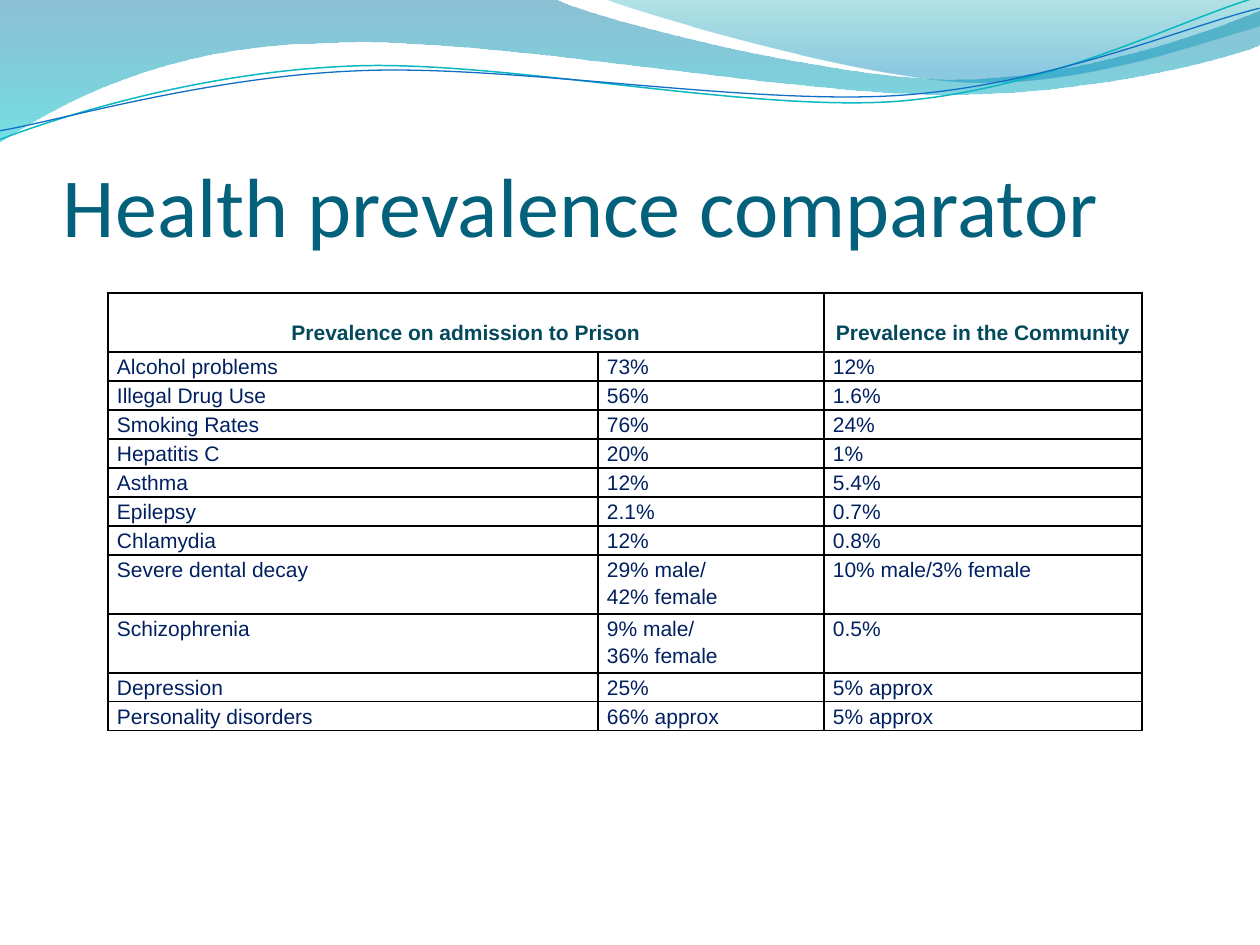
"""Build the health prevalence comparator slide."""
import lxml.etree
import pptx
import pptx.dml.color
import pptx.enum.text
import pptx.oxml.ns
import pptx.util

RGB = pptx.dml.color.RGBColor
ALIGN = pptx.enum.text.PP_ALIGN
ANCHOR = pptx.enum.text.MSO_ANCHOR
qn = pptx.oxml.ns.qn
Pt = pptx.util.Pt

TITLE = RGB(0x04, 0x61, 0x7B)
HEADER = RGB(0x03, 0x49, 0x5C)
BODY = RGB(0x00, 0x20, 0x60)
DEEP_TEAL = RGB(0x00, 0x74, 0xA1)
AQUA = RGB(0x00, 0xC6, 0xCF)
GREEN_TEAL = RGB(0x00, 0xA1, 0xA9)
SKY = RGB(0x00, 0x8B, 0xBF)
TEAL_LINE = RGB(0x0A, 0xB8, 0xBF)
BLUE_LINE = RGB(0x0F, 0x6F, 0xC6)


def px(n):
    return round(n * 914400 / 126)


def add_curve(shapes, start, segments, close):
    points = [pt for seg in segments for pt in zip(seg[::2], seg[1::2])]
    builder = shapes.build_freeform(px(start[0]), px(start[1]))
    builder.add_line_segments([(px(x), px(y)) for x, y in points], close=close)
    s = builder.convert_to_shape()
    s.shadow.inherit = False
    steps = iter(list(s._element.iter(qn("a:lnTo"))))
    for seg in segments:
        step = next(steps)
        if len(seg) == 6:
            step.addprevious(curve := lxml.etree.Element(qn("a:cubicBezTo")))
            for part in (step, next(steps), next(steps)):
                curve.append(part[0])
                part.getparent().remove(part)
    return s


prs = pptx.Presentation()
prs.slide_width, prs.slide_height = px(1260), px(945)
slide = prs.slides.add_slide(prs.slide_layouts[6])

waves = [
    ((0, 0),
     [(554, -1), (600, 21, 837, 79, 955, 79), (1075, 79, 1207, 33, 1260, 11),
      (1261, 45), (1238, 55, 1096, 96, 940, 94), (783, 94, 481, 35, 324, 43),
      (163, 45, 58, 105, -1, 142)],
     [(0, DEEP_TEAL, 45), (1, AQUA, 55)]),
    ((604, -1),
     [(641, 14, 859, 78, 969, 82), (1079, 87, 1211, 40, 1260, 26), (1260, 0)],
     [(0, GREEN_TEAL, 30), (0.8, SKY, 45)]),
]
for start, segments, stops in waves:
    s = add_curve(slide.shapes, start, segments, True)
    s.line.fill.background()
    s.fill.gradient()
    s.fill.gradient_angle = 270
    for stop, (position, color, _) in zip(s.fill.gradient_stops, stops):
        stop.position = position
        stop.color.rgb = color
    colors = s._element.spPr.iter(qn("a:srgbClr"))
    for clr, (_, _, alpha) in zip(colors, stops):
        lxml.etree.SubElement(clr, qn("a:alpha"), val=str(alpha * 1000))

lines = [
    ((-3, 110),
     [(58, 90, 199, 52, 350, 53), (499, 53, 745, 118, 896, 114),
      (1049, 109, 1184, 45, 1260, 27)], TEAL_LINE, 0.85),
    ((-2, 101),
     [(57, 94, 207, 57, 357, 58), (509, 58, 750, 112, 902, 108),
      (1052, 104, 1189, 52, 1262, 38)], BLUE_LINE, 0.75),
]
for start, segments, color, width in lines:
    s = add_curve(slide.shapes, start, segments, False)
    s.rotation = 357.3
    s.fill.background()
    s.line.color.rgb = color
    s.line.width = Pt(width)

rows = [
    ("Prevalence on admission to Prison", "", "Prevalence in the Community"),
    ("Alcohol problems", "73%", "12%"),
    ("Illegal Drug Use", "56%", "1.6%"),
    ("Smoking Rates", "76%", "24%"),
    ("Hepatitis C", "20%", "1%"),
    ("Asthma", "12%", "5.4%"),
    ("Epilepsy", "2.1%", "0.7%"),
    ("Chlamydia", "12%", "0.8%"),
    ("Severe dental decay", "29% male/\n42% female", "10% male/3% female"),
    ("Schizophrenia", "9% male/\n36% female", "0.5%"),
    ("Depression", "25%", "5% approx"),
    ("Personality disorders", "66% approx", "5% approx"),
]
widths = [490, 226, 318]
heights = [59 if i == 0 or "\n" in row[1] else 29 for i, row in enumerate(rows)]
table = slide.shapes.add_table(len(rows), len(widths), px(108), px(293),
                               px(sum(widths)), px(sum(heights))).table
table.first_row = table.horz_banding = False
for col, width in zip(table.columns, widths):
    col.width = px(width)
for row, height in zip(table.rows, heights):
    row.height = px(height)
table.cell(0, 0).merge(table.cell(0, 1))

for i, row in enumerate(rows):
    for j, text in enumerate(row):
        cell = table.cell(i, j)
        cell.margin_left = cell.margin_right = px(9)
        cell.margin_top = 0
        cell.margin_bottom = px(0 if i else 7)
        cell.vertical_anchor = ANCHOR.TOP if i else ANCHOR.BOTTOM
        tcPr = cell._tc.get_or_add_tcPr()
        for side in ("a:lnL", "a:lnR", "a:lnT", "a:lnB"):
            ln = lxml.etree.SubElement(tcPr, qn(side), w=str(Pt(1)))
            fill = lxml.etree.SubElement(ln, qn("a:solidFill"))
            lxml.etree.SubElement(fill, qn("a:srgbClr"), val="000000")
        cell.fill.background()
        if not text:
            continue
        tf = cell.text_frame
        for k, line in enumerate(text.split("\n")):
            p = tf.add_paragraph() if k else tf.paragraphs[0]
            p.alignment = ALIGN.JUSTIFY if i else ALIGN.CENTER
            p.line_spacing = 1.15
            r = p.add_run()
            r.text = line
            r.font.name = "Arial"
            r.font.size = Pt(12)
            r.font.bold = i == 0
            r.font.color.rgb = BODY if i else HEADER

s = slide.shapes.add_textbox(px(63), px(97), px(1134), px(157))
tf = s.text_frame
tf.word_wrap = True
tf.vertical_anchor = ANCHOR.BOTTOM
tf.margin_left = tf.margin_right = tf.margin_bottom = 0
tf.margin_top = px(6)
r = tf.paragraphs[0].add_run()
r.text = "Health prevalence comparator"
r.font.name = "Calibri"
r.font.size = Pt(48)
r.font.color.rgb = TITLE

prs.save("out.pptx")
